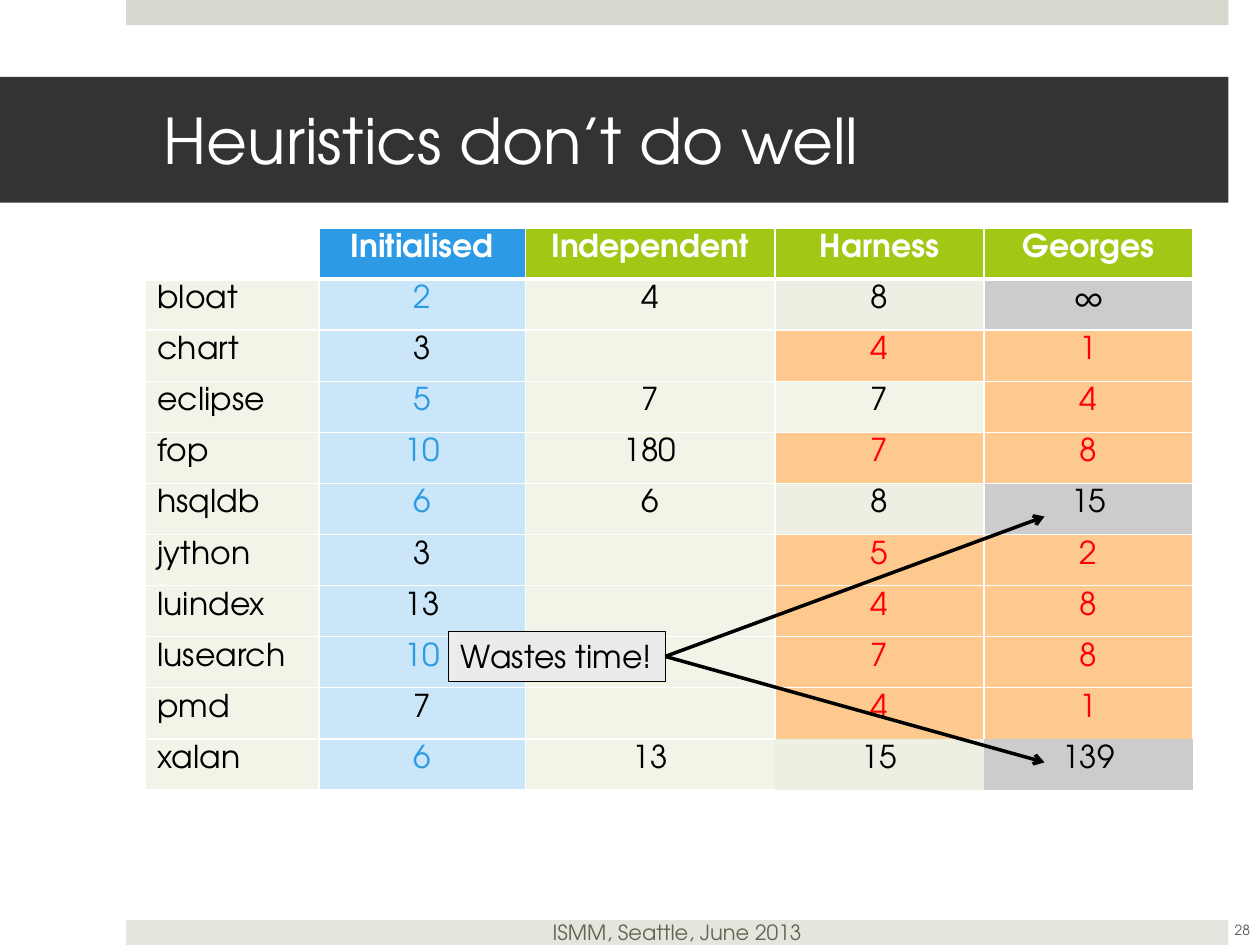
from lxml.etree import SubElement
from pptx import Presentation
from pptx.dml.color import RGBColor
from pptx.enum.shapes import MSO_CONNECTOR as CONN, MSO_SHAPE as SHAPE
from pptx.enum.text import MSO_ANCHOR as ANCHOR, PP_ALIGN as ALIGN
from pptx.oxml.ns import qn
from pptx.util import Inches, Pt

FONT = "TeX Gyre Adventor"
WHITE = RGBColor(0xFF, 0xFF, 0xFF)
BLACK = RGBColor(0, 0, 0)
RED = RGBColor(0xFF, 0, 0)
CHARCOAL = RGBColor(0x33, 0x33, 0x33)
TOP_BAND = RGBColor(0xD6, 0xD9, 0xCD)
FOOTER_BAND = RGBColor(0xE4, 0xE6, 0xDE)
FOOTER_TEXT = RGBColor(0x61, 0x67, 0x4F)
NUMBER_TEXT = RGBColor(0x59, 0x59, 0x59)
LABEL = RGBColor(0xEB, 0xEB, 0xEB)
BLUE = RGBColor(0x2C, 0x9A, 0xE5)
GREEN = RGBColor(0xA2, 0xC8, 0x16)
PALE_BLUE = RGBColor(0xCB, 0xE6, 0xF9)
PALE_GREEN = RGBColor(0xF0, 0xF5, 0xE8)
SAGE = RGBColor(0xEC, 0xEF, 0xE2)
GREY = RGBColor(0xCC, 0xCC, 0xCC)
ORANGE = RGBColor(0xFE, 0xC9, 0x8E)

# Cell style codes: fill, text colour
STYLES = {
    "N": (None, WHITE), "H": (BLUE, WHITE), "G": (GREEN, WHITE),
    "p": (PALE_GREEN, BLACK), "s": (SAGE, BLACK), "g": (GREY, BLACK),
    "o": (ORANGE, RED), "b": (PALE_BLUE, BLUE), "k": (PALE_BLUE, BLACK),
}
ROWS = [
    ("NHGGG", ["", "Initialised", "Independent", "Harness", "Georges"]),
    ("pbpsg", ["bloat", "2", "4", "8", "∞"]),
    ("pkpoo", ["chart", "3", "", "4", "1"]),
    ("pbppo", ["eclipse", "5", "7", "7", "4"]),
    ("pbpoo", ["fop", "10", "180", "7", "8"]),
    ("pbpsg", ["hsqldb", "6", "6", "8", "15"]),
    ("pkpoo", ["jython", "3", "", "5", "2"]),
    ("pkpoo", ["luindex", "13", "", "4", "8"]),
    ("pbpoo", ["lusearch", "10", "", "7", "8"]),
    ("pkpoo", ["pmd", "7", "", "4", "1"]),
    ("pbpsg", ["xalan", "6", "13", "15", "139"]),
]
COL_WIDTHS = [1.38, 1.64, 1.98, 1.66, 1.66]
LAST = len(ROWS) - 1

prs = Presentation()
prs.slide_width, prs.slide_height = Inches(10), Inches(7.5)
slide = prs.slides.add_slide(prs.slide_layouts[6])


def add_box(left, top, width, height, fill, text="", size=18, color=BLACK, align=ALIGN.CENTER):
    """Add a borderless rectangle, in inches, with one line of text."""
    sp = slide.shapes.add_shape(SHAPE.RECTANGLE, Inches(left), Inches(top), Inches(width), Inches(height))
    sp.shadow.inherit = False
    sp.line.fill.background()
    sp.fill.solid()
    sp.fill.fore_color.rgb = fill
    if text:
        tf = sp.text_frame
        tf.vertical_anchor = ANCHOR.MIDDLE
        tf.text = text
        write_style(tf.paragraphs[0], size, color, align)
    return sp


def write_style(p, size, color, align, bold=False):
    p.alignment = align
    for r in p.runs:
        r.font.name, r.font.size, r.font.bold = FONT, Pt(size), bold
        r.font.color.rgb = color


# Bands and title
add_box(1, 0, 8.75, 0.2, TOP_BAND)
add_box(1, 7.3, 8.75, 0.2, FOOTER_BAND, "ISMM, Seattle, June 2013", 12, FOOTER_TEXT)
title = add_box(0, 0.61, 9.75, 1, CHARCOAL, "Heuristics don’t do well", 36, WHITE, ALIGN.LEFT)
title.text_frame.margin_left, title.text_frame.margin_right = Inches(1.3), Inches(0.3)

# Table
table = slide.shapes.add_table(len(ROWS), len(COL_WIDTHS), Inches(1.15), Inches(1.81),
                               Inches(sum(COL_WIDTHS)), Inches(4.46)).table
table.horz_banding = False
for column, width in zip(table.columns, COL_WIDTHS):
    column.width = Inches(width)

for i, (codes, values) in enumerate(ROWS):
    for j, (code, value) in enumerate(zip(codes, values)):
        cell = table.cell(i, j)
        fill, color = STYLES[code]
        hidden = ""  # sides without a line, around the last two cells
        if i == LAST:
            hidden = {2: "R", 3: "LRTB", 4: "LRTB"}.get(j, "")
        elif i == LAST - 1 and j >= 3:
            hidden = "B"
        for side in "LRTB":
            points = 3 if i == 0 and side == "B" else 1
            ln = SubElement(cell._tc.get_or_add_tcPr(), qn(f"a:ln{side}"), w=str(Pt(points)))
            if side in hidden:
                SubElement(ln, qn("a:noFill"))
            else:
                SubElement(SubElement(ln, qn("a:solidFill")), qn("a:srgbClr"), val=str(WHITE))
        if fill is None:
            cell.fill.background()
        else:
            cell.fill.solid()
            cell.fill.fore_color.rgb = fill
        cell.text = value
        write_style(cell.text_frame.paragraphs[0], 18, color,
                    ALIGN.CENTER if j else ALIGN.LEFT, bold=i == 0)

# Label with arrows to the slow cells
label = add_box(3.56, 5.01, 1.72, 0.4, LABEL, "Wastes time!", align=ALIGN.LEFT)
label.line.color.rgb, label.line.width = BLACK, Pt(0.75)
label.text_frame.word_wrap = False
for tip_y in (6.05, 4.1):
    arrow = slide.shapes.add_connector(CONN.STRAIGHT, Inches(5.28), Inches(5.21), Inches(8.29), Inches(tip_y))
    arrow.begin_connect(label, 3)
    arrow.line.color.rgb, arrow.line.width = BLACK, Pt(2)
    SubElement(arrow.line._get_or_add_ln(), qn("a:tailEnd"), type="arrow")
    SubElement(arrow._element.spPr, qn("a:effectLst"))

# Slide number
number = slide.shapes.add_textbox(Inches(9.61), Inches(7.18), Inches(0.5), Inches(0.4))
tf = number.text_frame
tf.word_wrap = True
tf.vertical_anchor = ANCHOR.MIDDLE
tf.text = "28"
write_style(tf.paragraphs[0], 8, NUMBER_TEXT, ALIGN.CENTER)

prs.save("out.pptx")
